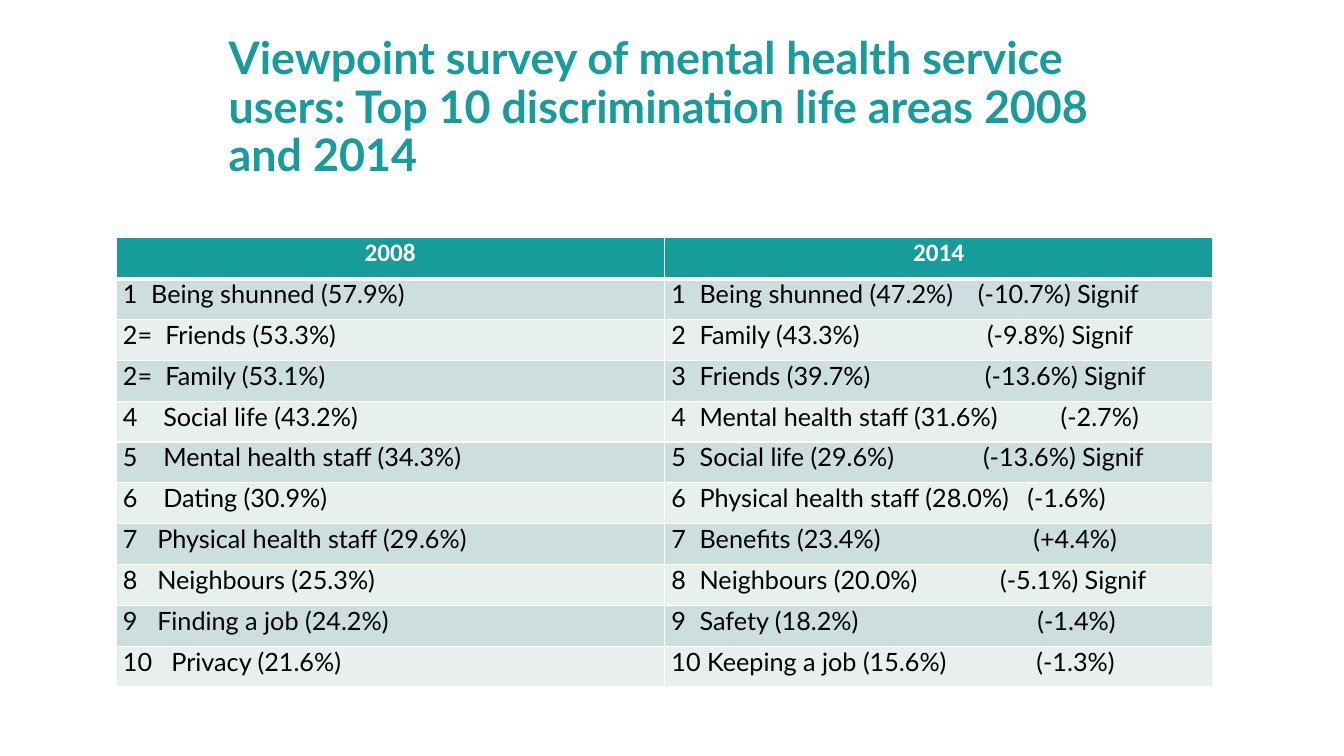
from lxml.etree import SubElement
from pptx import Presentation
from pptx.dml.color import RGBColor
from pptx.enum.text import MSO_ANCHOR, PP_ALIGN
from pptx.oxml.ns import qn
from pptx.util import Inches, Pt

COLORS = {
    "teal": "169C9A",
    "white": "FFFFFF",
    "black": "000000",
    "band_dark": "CCDEDE",
    "band_light": "E8EFEF",
}

TITLE = ("Viewpoint survey of mental health service users: "
         "Top 10 discrimination life areas 2008 and 2014")
HEADERS = ["2008", "2014"]

AREAS_2008 = [
    (["1", "Being shunned (57.9%)"], [0.28]),
    (["2=", "Friends (53.3%)"], [0.42]),
    (["2=", "Family (53.1%)"], [0.42]),
    (["4", "Social life (43.2%)"], [0.4]),
    (["5", "Mental health staff (34.3%)"], [0.4]),
    (["6", "Dating (30.9%)"], [0.4]),
    (["7", "Physical health staff (29.6%)"], [0.34]),
    (["8", "Neighbours (25.3%)"], [0.34]),
    (["9", "Finding a job (24.2%)"], [0.34]),
    (["10", "Privacy (21.6%)"], [0.48]),
]
AREAS_2014 = [
    (["1", "Being shunned (47.2%)", "(-10.7%) Signif"], [0.28, 3.04]),
    (["2", "Family (43.3%)", "(-9.8%) Signif"], [0.28, 3.13]),
    (["3", "Friends (39.7%)", "(-13.6%) Signif"], [0.28, 3.11]),
    (["4", "Mental health staff (31.6%)", "(-2.7%)"], [0.28, 3.86]),
    (["5", "Social life (29.6%)", "(-13.6%) Signif"], [0.28, 3.09]),
    (["6", "Physical health staff (28.0%)", "(-1.6%)"], [0.28, 3.53]),
    (["7", "Benefits (23.4%)", "(+4.4%)"], [0.28, 3.59]),
    (["8", "Neighbours (20.0%)", "(-5.1%) Signif"], [0.28, 3.26]),
    (["9", "Safety (18.2%)", "(-1.4%)"], [0.28, 3.63]),
    (["10 Keeping a job (15.6%)", "(-1.3%)"], [3.62]),
]


def add_run(p, text, size, font, color, bold=False):
    r = p.add_run()
    r.text = text
    r.font.size = Pt(size)
    r.font.name = font
    r.font.bold = bold
    r.font.color.rgb = RGBColor.from_string(COLORS[color])


def set_tabs(p, stops):
    tabs = SubElement(p._p.get_or_add_pPr(), qn("a:tabLst"))
    for stop in stops:
        SubElement(tabs, qn("a:tab"), pos=str(Inches(stop)), algn="l")


def style_cell(cell, fill, bottom=1):
    cell.margin_left = cell.margin_right = Inches(0.07)
    cell.margin_top = cell.margin_bottom = 0
    tcPr = cell._tc.get_or_add_tcPr()
    for side, width in zip("LRTB", (1, 1, 1, bottom)):
        ln = SubElement(tcPr, qn(f"a:ln{side}"), w=str(Pt(width)))
        line_fill = SubElement(ln, qn("a:solidFill"))
        SubElement(line_fill, qn("a:srgbClr"), val=COLORS["white"])
    cell.fill.solid()
    cell.fill.fore_color.rgb = RGBColor.from_string(COLORS[fill])


def add_title(s, left, top, width, height):
    sp = s.shapes.add_textbox(Inches(left), Inches(top), Inches(width), Inches(height))
    tf = sp.text_frame
    tf.word_wrap = True
    tf.vertical_anchor = MSO_ANCHOR.MIDDLE
    p = tf.paragraphs[0]
    p.line_spacing = 0.9
    add_run(p, TITLE, 32, "Lato", "teal", True)


def add_areas_table(s, left, top, width, height):
    table = s.shapes.add_table(len(AREAS_2008) + 1, len(HEADERS), Inches(left),
                               Inches(top), Inches(width), Inches(height)).table
    for col, (header, areas) in enumerate(zip(HEADERS, (AREAS_2008, AREAS_2014))):
        cell = table.cell(0, col)
        style_cell(cell, "teal", bottom=3)
        p = cell.text_frame.paragraphs[0]
        p.alignment = PP_ALIGN.CENTER
        add_run(p, header, 18, "Calibri", "white", True)
        for row, (parts, stops) in enumerate(areas, 1):
            cell = table.cell(row, col)
            style_cell(cell, "band_dark" if row % 2 else "band_light")
            p = cell.text_frame.paragraphs[0]
            set_tabs(p, stops)
            add_run(p, "\t".join(parts), 18, "Lato", "black")


def main():
    prs = Presentation()
    prs.slide_width = Inches(13.33)
    prs.slide_height = Inches(7.5)
    s = prs.slides.add_slide(prs.slide_layouts[6])
    add_title(s, 2.17, 0.3, 8.99, 1.56)
    add_areas_table(s, 1.15, 2.36, 10.88, 4.46)
    prs.save("out.pptx")


if __name__ == "__main__":
    main()
